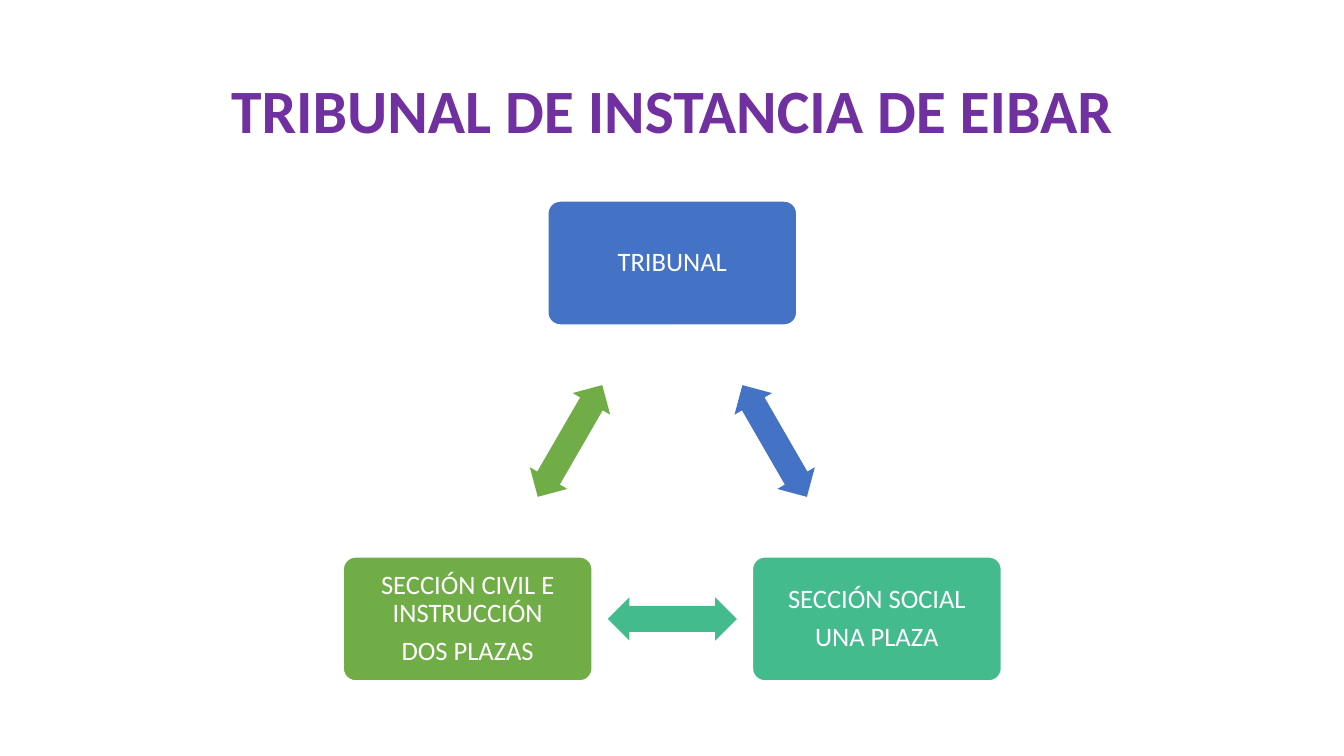
from math import atan2, degrees

from pptx import Presentation
from pptx.dml.color import RGBColor
from pptx.enum.shapes import MSO_SHAPE as Shape
from pptx.enum.text import MSO_ANCHOR as Anchor, PP_ALIGN as Align
from pptx.util import Emu, Pt

TITLE = "TRIBUNAL DE INSTANCIA DE EIBAR"
# Clockwise from the top: centre x, centre y, colour, paragraphs
BOXES = [
    (667, 261, "4472C4", ["TRIBUNAL"]),
    (870, 614, "43BB8D", ["SECCIÓN SOCIAL", "UNA PLAZA"]),
    (464, 614, "70AD47", ["SECCIÓN CIVIL E INSTRUCCIÓN", "DOS PLAZAS"]),
]
BOX_SIZE = (247, 123)
ARROW_SIZE = (128, 43)
FONT = "Calibri"
WHITE = "FFFFFF"
PURPLE = "7030A0"


def px(length):
    """Convert px, at 100 to the inch, to EMU."""
    return Emu(round(length * 9144))


def color(value):
    return RGBColor.from_string(value)


def write(frame, lines, size, text_color, bold=False, space_after=0):
    frame.word_wrap = True
    frame.vertical_anchor = Anchor.MIDDLE
    for index, line in enumerate(lines):
        paragraph = frame.add_paragraph() if index else frame.paragraphs[0]
        paragraph.alignment = Align.CENTER
        paragraph.line_spacing = 0.9
        paragraph.space_after = Pt(space_after)
        run = paragraph.add_run()
        run.text = line
        run.font.name = FONT
        run.font.size = Pt(size)
        run.font.bold = bold
        run.font.color.rgb = color(text_color)


def add_centered(slide, kind, center_x, center_y, size, fill, adjustments):
    width, height = size
    shape = slide.shapes.add_shape(
        kind, px(center_x - width / 2), px(center_y - height / 2), px(width), px(height))
    shape.shadow.inherit = False
    shape.fill.solid()
    shape.fill.fore_color.rgb = color(fill)
    for index, value in enumerate(adjustments):
        shape.adjustments[index] = value
    return shape


def add_box(slide, x, y, fill, lines):
    box = add_centered(slide, Shape.ROUNDED_RECTANGLE, x, y, BOX_SIZE, fill, [0.1])
    box.line.color.rgb = color(WHITE)
    box.line.width = Pt(1)
    frame = box.text_frame
    frame.margin_left = frame.margin_right = px(8)
    frame.margin_top = frame.margin_bottom = px(8)
    write(frame, lines, 19, WHITE, space_after=6.5)


def add_arrow(slide, start, end):
    """Place a double arrow midway between two boxes, in the colour of the first."""
    x1, y1, fill, _ = start
    x2, y2, _, _ = end
    arrow = add_centered(slide, Shape.LEFT_RIGHT_ARROW, (x1 + x2) / 2, (y1 + y2) / 2,
                         ARROW_SIZE, fill, [0.6, 0.5])
    arrow.line.fill.background()
    arrow.rotation = round(degrees(atan2(y2 - y1, x2 - x1))) % 360


def main():
    presentation = Presentation()
    presentation.slide_width, presentation.slide_height = px(1333.33), px(750)
    slide = presentation.slides.add_slide(presentation.slide_layouts[6])
    title = slide.shapes.add_textbox(px(92), px(40), px(1150), px(145))
    write(title.text_frame, [TITLE], 44, PURPLE, bold=True)
    for index, box in enumerate(BOXES):
        add_box(slide, *box)
        add_arrow(slide, box, BOXES[(index + 1) % len(BOXES)])
    presentation.save("out.pptx")


if __name__ == "__main__":
    main()
